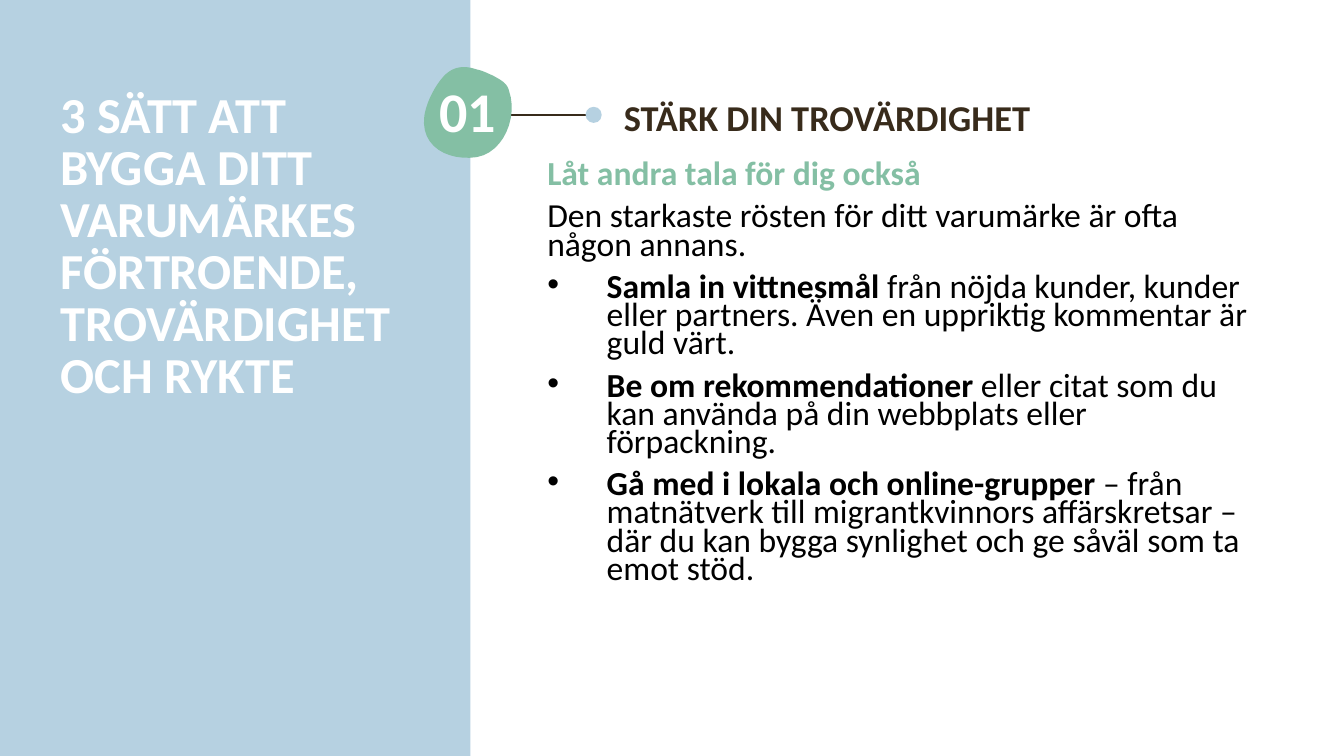
from lxml import etree
from pptx import Presentation
from pptx.dml.color import RGBColor
from pptx.enum.shapes import MSO_CONNECTOR, MSO_SHAPE
from pptx.enum.text import PP_ALIGN
from pptx.oxml.ns import qn
from pptx.util import Pt

RECTANGLE = MSO_SHAPE.RECTANGLE
OVAL = MSO_SHAPE.OVAL
STRAIGHT = MSO_CONNECTOR.STRAIGHT
LEFT = PP_ALIGN.LEFT
CENTER = PP_ALIGN.CENTER

FONT = "Calibri"
BLUE, GREEN, BROWN = "B6D1E1", "84BFA4", "382B1B"
WHITE, BLACK = "FFFFFF", "000000"
CURVE_STEPS = 12
BULLET_INDENT = 42.5

BADGE_START = (340.6, 49.7)
BADGE_CURVES = [
    ((332.6, 46.8), (324, 46.8), (316.8, 54.7)),
    ((310.3, 61.9), (304.6, 73.4), (303.1, 82.8)),
    ((300.2, 105.1), (320.4, 115.2), (340.6, 112.3)),
    ((360, 108.7), (370.1, 83.5), (363.6, 64.8)),
    ((362.2, 59), (357.1, 56.9), (352.1, 54)),
    ((348.5, 52.6), (344.9, 50.4), (340.6, 49.7)),
]

INTRO = "Den starkaste rösten för ditt varumärke är ofta någon annans."
TIPS = [
    ("Samla in vittnesmål ",
     "från nöjda kunder, kunder eller partners. "
     "Även en uppriktig kommentar är guld värt."),
    ("Be om rekommendationer ",
     "eller citat som du kan använda på din webbplats eller förpackning."),
    ("Gå med i lokala och online-grupper ",
     "– från matnätverk till migrantkvinnors affärskretsar – "
     "där du kan bygga synlighet och ge såväl som ta emot stöd."),
]


def color(hex_code):
    return RGBColor.from_string(hex_code)


def curve_points(start, curves):
    """Sample a chain of cubic Bézier curves as points."""
    points = []
    for first, second, end in curves:
        for step in range(1, CURVE_STEPS + 1):
            t = step / CURVE_STEPS
            u = 1 - t
            points.append(tuple(
                Pt(u**3 * a + 3 * u * u * t * b + 3 * u * t * t * c + t**3 * d)
                for a, b, c, d in zip(start, first, second, end)))
        start = end
    return points


class SlideBuilder:
    def __init__(self, page, font):
        self.shapes = page.shapes
        self.font = font

    def paint(self, shape, fill):
        shape.shadow.inherit = False
        shape.fill.solid()
        shape.fill.fore_color.rgb = color(fill)
        shape.line.fill.background()

    def shape(self, kind, left, top, width, height, fill):
        shape = self.shapes.add_shape(kind, Pt(left), Pt(top), Pt(width), Pt(height))
        self.paint(shape, fill)

    def curved_shape(self, start, curves, fill):
        builder = self.shapes.build_freeform(Pt(start[0]), Pt(start[1]))
        builder.add_line_segments(curve_points(start, curves), close=True)
        self.paint(builder.convert_to_shape(), fill)

    def line(self, x1, y1, x2, y2, stroke, weight):
        line = self.shapes.add_connector(STRAIGHT, Pt(x1), Pt(y1), Pt(x2), Pt(y2))
        line.line.color.rgb = color(stroke)
        line.line.width = Pt(weight)
        etree.SubElement(line._element.spPr, qn("a:effectLst"))

    def text_box(self, left, top, width, height):
        box = self.shapes.add_textbox(Pt(left), Pt(top), Pt(width), Pt(height))
        box.text_frame.word_wrap = True
        return box.text_frame

    def paragraph(self, frame, spans, size, spacing=None, before=None,
                  align=LEFT, bullet=False):
        """Write (text, colour, bold) spans, reusing the frame's empty first paragraph."""
        para = frame.paragraphs[0]
        if para.runs:
            para = frame.add_paragraph()
            if before is not None:
                para.space_before = Pt(before)
        para.alignment = align
        if spacing is not None:
            para.line_spacing = spacing
        if bullet:
            props = para._p.get_or_add_pPr()
            props.set("marL", str(Pt(BULLET_INDENT)))
            props.set("indent", str(-Pt(BULLET_INDENT)))
            etree.SubElement(props, qn("a:buFont")).set("typeface", "Arial")
            etree.SubElement(props, qn("a:buChar")).set("char", "•")
        for text, ink, bold in spans:
            span = para.add_run()
            span.text = text
            span.font.name = self.font
            span.font.size = Pt(size)
            span.font.bold = bold
            span.font.color.rgb = color(ink)


def main():
    deck = Presentation()
    deck.slide_width, deck.slide_height = Pt(960), Pt(540)
    page = deck.slides.add_slide(deck.slide_layouts[6])
    slide = SlideBuilder(page, FONT)

    slide.shape(RECTANGLE, 0, 0, 336, 540, BLUE)
    slide.line(421.9, 82.1, 326.2, 82.1, BROWN, 1.5)
    slide.shape(OVAL, 418.3, 76.3, 11.5, 11.5, BLUE)
    slide.curved_shape(BADGE_START, BADGE_CURVES, GREEN)

    number = slide.text_box(298.8, 56.9, 70.6, 42.5)
    slide.paragraph(number, [("01", WHITE, True)], 40, 0.9, align=CENTER)

    heading = slide.text_box(438.5, 64.1, 480.2, 70.6)
    slide.paragraph(heading, [("STÄRK DIN TROVÄRDIGHET", BROWN, True)], 26)

    title = slide.text_box(36, 61.9, 261.4, 151.9)
    slide.paragraph(
        title,
        [("3 SÄTT ATT BYGGA DITT VARUMÄRKES FÖRTROENDE, "
          "TROVÄRDIGHET OCH RYKTE", WHITE, True)],
        36, Pt(37.2))

    body = slide.text_box(383.8, 113, 524.2, 292.3)
    slide.paragraph(body, [("Låt andra tala för dig också", GREEN, True)], 24, 0.7)
    slide.paragraph(body, [(INTRO, BLACK, False)], 24, 0.7, 10)
    for lead, rest in TIPS:
        slide.paragraph(body, [(lead, BLACK, True), (rest, BLACK, False)],
                        24, 0.7, 10, bullet=True)

    deck.save("out.pptx")


if __name__ == "__main__":
    main()
